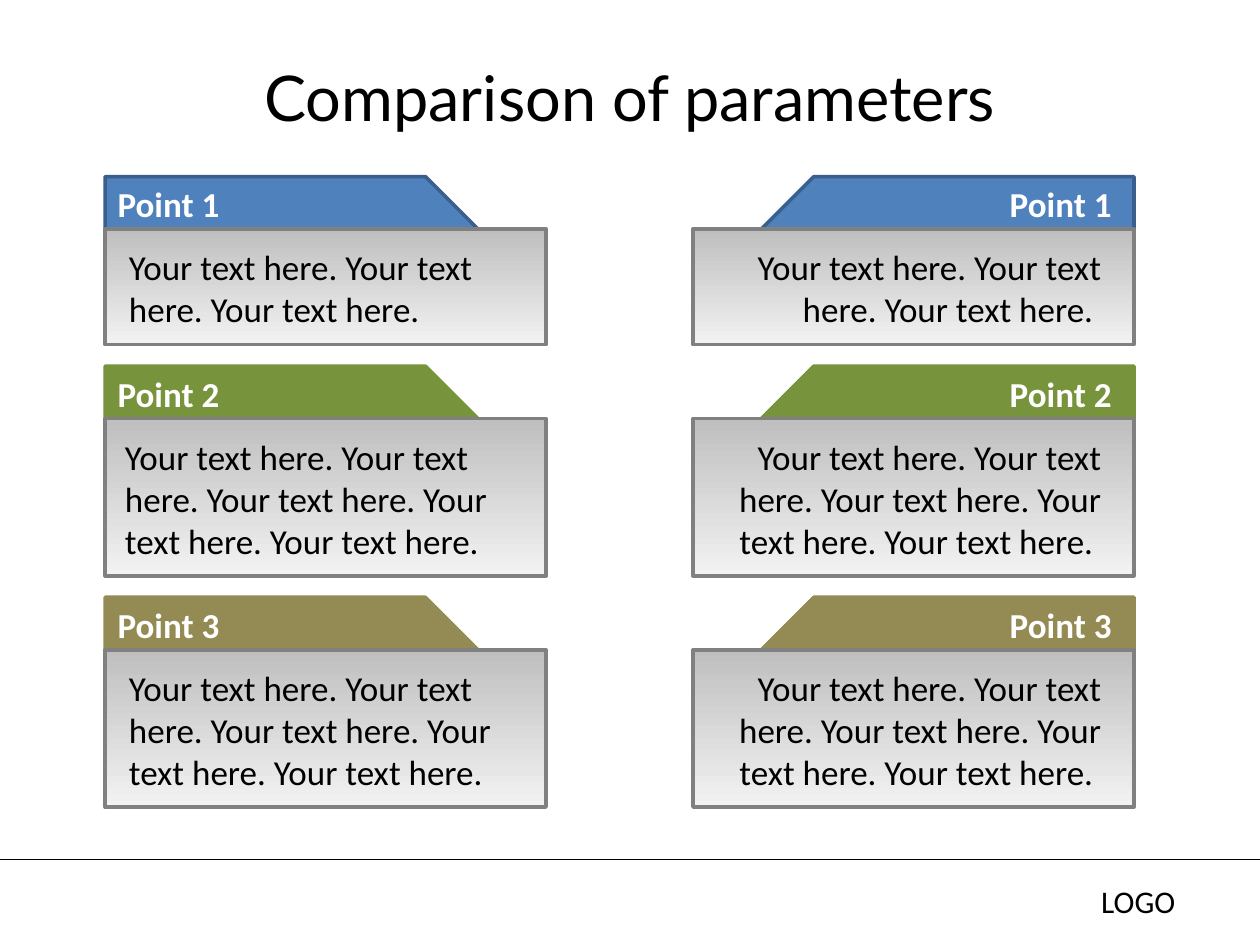
from lxml import etree
from pptx import Presentation
from pptx.dml.color import RGBColor
from pptx.enum.shapes import MSO_CONNECTOR, MSO_SHAPE
from pptx.enum.text import MSO_ANCHOR, MSO_AUTO_SIZE, PP_ALIGN
from pptx.oxml.ns import qn
from pptx.util import Cm, Pt

LEFT, CENTER, RIGHT = PP_ALIGN.LEFT, PP_ALIGN.CENTER, PP_ALIGN.RIGHT
MIDDLE = MSO_ANCHOR.MIDDLE
FIT_SHAPE = MSO_AUTO_SIZE.SHAPE_TO_FIT_TEXT
PENTAGON, RECTANGLE = MSO_SHAPE.PENTAGON, MSO_SHAPE.RECTANGLE
STRAIGHT = MSO_CONNECTOR.STRAIGHT

COLORS = {
    "text": "000000",
    "label": "FFFFFF",
    "blue": "4F81BD",
    "blue_edge": "3A5F8C",
    "green": "77933C",
    "tan": "948A54",
    "panel_top": "BFBFBF",
    "panel_bottom": "F2F2F2",
    "panel_edge": "808080",
}

SLIDE_WIDTH, SLIDE_HEIGHT = 25.4, 19.05
CARD_WIDTH, TAB_WIDTH, TAB_HEIGHT = 8.89, 7.62, 2.33
PANEL_OFFSET, CARD_GAP, CARDS_TOP = 1.06, 0.43, 3.56
TEXT_WIDTH, LABEL_HEIGHT = 8.05, 1.11
SENTENCE = "Your text here."

# label, fill, edge, sentences, panel height, left text inset
POINTS = [
    ("Point 1", "blue", "blue_edge", 3, 2.33, 0.23),
    ("Point 2", "green", "green", 5, 3.17, 0.15),
    ("Point 3", "tan", "tan", 5, 3.17, 0.23),
]


def rgb(name):
    return RGBColor.from_string(COLORS[name])


def format_text(text_frame, text, size, color="text", align=LEFT, bold=False, font="Calibri"):
    text_frame.text = text
    paragraph = text_frame.paragraphs[0]
    paragraph.alignment = align
    run_font = paragraph.runs[0].font
    run_font.name, run_font.size, run_font.bold = font, Pt(size), bold
    run_font.color.rgb = rgb(color)


def add_text(shapes, box, text, size, **style):
    text_box = shapes.add_textbox(*map(Cm, box))
    text_box.text_frame.word_wrap = True
    text_box.text_frame.auto_size = FIT_SHAPE
    format_text(text_box.text_frame, text, size, **style)


def add_outlined_shape(shapes, kind, box, edge):
    shape = shapes.add_shape(kind, *map(Cm, box))
    shape.shadow.inherit = False
    shape.line.color.rgb = rgb(edge)
    shape.line.width = Pt(2)
    return shape


def add_title(slide, box):
    title = slide.shapes.title
    title.left, title.top, title.width, title.height = map(Cm, box)
    title.text_frame.vertical_anchor = MIDDLE
    format_text(title.text_frame, "Comparison of parameters", 36, align=CENTER, font="Lato")


def add_footer(slide, top):
    line = slide.shapes.add_connector(STRAIGHT, 0, Cm(top), Cm(SLIDE_WIDTH), Cm(top))
    line.line.color.rgb = rgb("text")
    line.line.width = Pt(0.75)
    etree.SubElement(line._element.spPr, qn("a:effectLst"))
    add_text(slide.shapes, (21.95, top + 0.33, 2.82, 1.02), "LOGO", 18)


def add_card(slide, left, top, point, mirrored):
    label, fill, edge, sentences, panel_height, text_inset = point
    shapes = slide.shapes.add_group_shape().shapes
    text = " ".join([SENTENCE] * sentences)
    align, tab_left, text_left, label_left = LEFT, left, left + text_inset, left
    if mirrored:
        text += " "
        align = RIGHT
        tab_left = left + CARD_WIDTH - TAB_WIDTH
        text_left, label_left = left + 0.43, left + 0.64

    tab = add_outlined_shape(shapes, PENTAGON, (tab_left, top, TAB_WIDTH, TAB_HEIGHT), edge)
    tab.fill.solid()
    tab.fill.fore_color.rgb = rgb(fill)
    tab.rotation = 180 if mirrored else 0

    panel_top = top + PANEL_OFFSET
    panel = add_outlined_shape(
        shapes, RECTANGLE, (left, panel_top, CARD_WIDTH, panel_height), "panel_edge")
    panel.fill.gradient()
    panel.fill.gradient_angle = 270
    for stop, color in zip(panel.fill.gradient_stops, ("panel_top", "panel_bottom")):
        stop.color.rgb = rgb(color)

    add_text(shapes, (text_left, panel_top + 0.21, TEXT_WIDTH, panel_height - 0.37),
             text, 20, align=align)
    add_text(shapes, (label_left, top, TEXT_WIDTH, LABEL_HEIGHT),
             label, 20, color="label", align=align, bold=True)


def add_column(slide, left, top, mirrored):
    for point in POINTS:
        add_card(slide, left, top, point, mirrored)
        top += PANEL_OFFSET + point[4] + CARD_GAP


def main():
    presentation = Presentation()
    presentation.slide_width, presentation.slide_height = Cm(SLIDE_WIDTH), Cm(SLIDE_HEIGHT)
    slide = presentation.slides.add_slide(presentation.slide_layouts[5])
    add_footer(slide, 17.32)
    add_title(slide, (1.27, 0.76, 22.86, 2.36))
    add_column(slide, 2.12, CARDS_TOP, mirrored=False)
    add_column(slide, 13.97, CARDS_TOP, mirrored=True)
    presentation.save("out.pptx")


if __name__ == "__main__":
    main()
